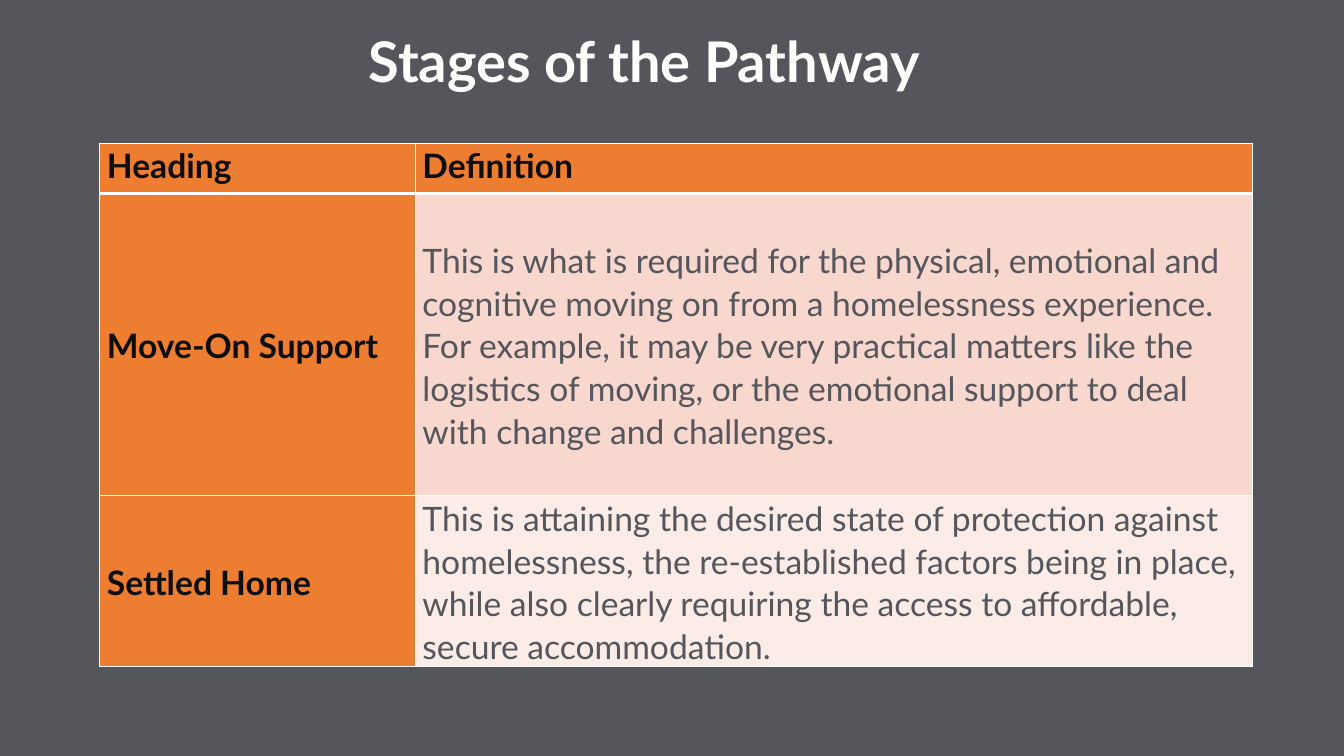
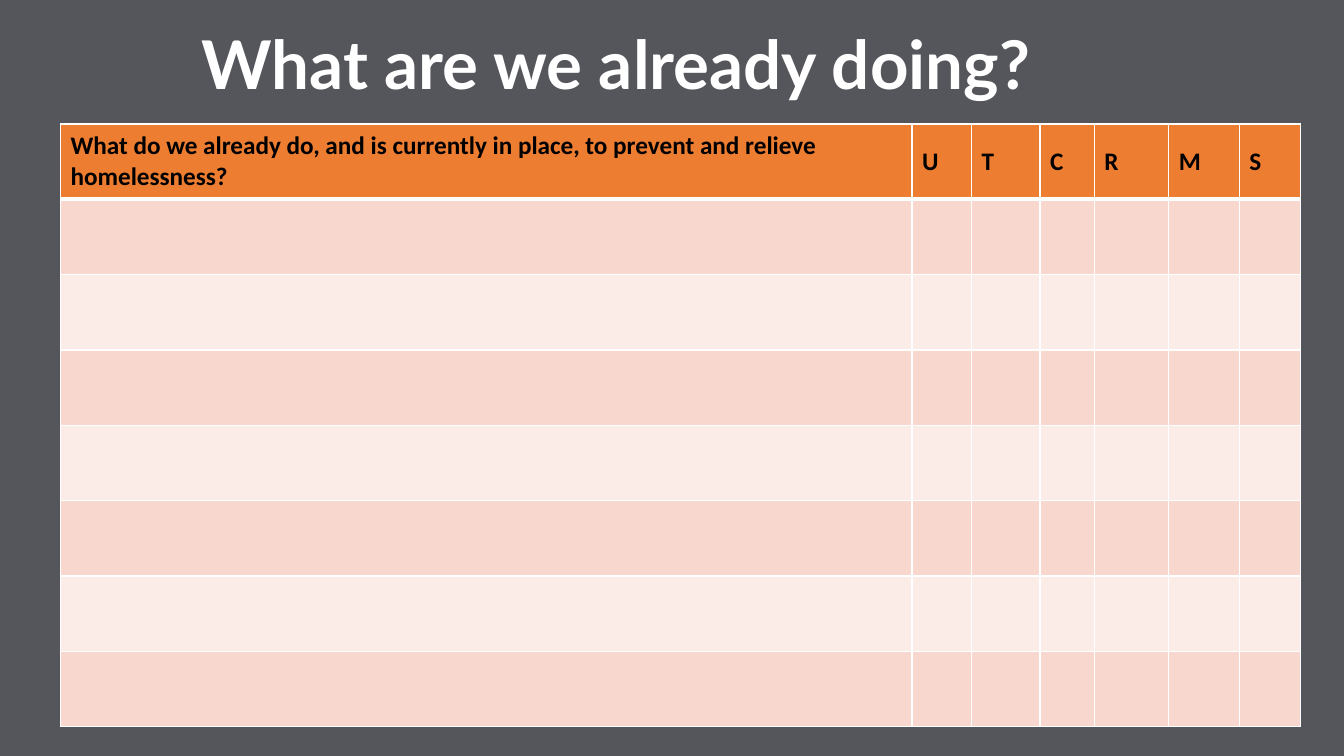
from dataclasses import dataclass

from lxml import etree
from pptx import Presentation
from pptx.dml.color import RGBColor
from pptx.enum.text import MSO_ANCHOR, PP_ALIGN
from pptx.oxml.ns import qn
from pptx.util import Inches, Pt

TOP, MIDDLE, BOTTOM = MSO_ANCHOR.TOP, MSO_ANCHOR.MIDDLE, MSO_ANCHOR.BOTTOM
LEFT, CENTER = PP_ALIGN.LEFT, PP_ALIGN.CENTER
WIDTH, HEIGHT = Inches(13.33), Inches(7.5)
BLANK_LAYOUT = 6


@dataclass(frozen=True)
class Theme:
    slate: str = "54565B"
    white: str = "FFFFFF"
    black: str = "000000"
    ink: str = "0D0D0D"
    orange: str = "ED7D31"
    bands: tuple[str, str] = ("F8D7CE", "FCECE8")
    title_font: str = "Lato"
    plain_font: str = "Calibri"
    large_title: int = 48
    title: int = 40
    body: int = 24
    label: int = 18
    rule: int = 1
    header_rule: int = 3


THEME = Theme()


@dataclass(frozen=True)
class Region:
    """Left, top, width and height as percentages of the slide."""
    left: float
    top: float
    width: float
    height: float

    def lengths(self) -> tuple[int, int, int, int]:
        return (round(WIDTH * self.left / 100), round(HEIGHT * self.top / 100),
                round(WIDTH * self.width / 100), round(HEIGHT * self.height / 100))


@dataclass(frozen=True)
class Title:
    text: str
    region: Region
    size: int
    align: PP_ALIGN


@dataclass(frozen=True)
class Grid:
    region: Region
    columns: tuple[float, ...]
    rows: tuple[float, ...]
    texts: tuple[tuple[str, ...], ...]
    font: str
    size: int
    heading_color: str
    heading_column: bool
    header_anchor: MSO_ANCHOR
    margins: tuple[float, float]
    line_spacing: float


@dataclass(frozen=True)
class Page:
    title: Title
    grid: Grid


PAGES = (
    Page(
        Title("Stages of the Pathway", Region(11.55, 0.93, 72.77, 12.27), THEME.title, CENTER),
        Grid(
            region=Region(7.43, 18.93, 85.75, 66.67),
            columns=(3.13, 8.3),
            rows=(1, 6, 3),
            texts=(
                ("Heading", "Definition"),
                ("Move-On Support",
                 "This is what is required for the physical, emotional and cognitive moving on "
                 "from a homelessness experience. For example, it may be very practical matters "
                 "like the logistics of moving, or the emotional support to deal with change "
                 "and challenges."),
                ("Settled Home",
                 "This is attaining the desired state of protection against homelessness, the "
                 "re-established factors being in place, while also clearly requiring the "
                 "access to affordable, secure accommodation."),
            ),
            font=THEME.title_font, size=THEME.body, heading_color=THEME.ink,
            heading_column=True, header_anchor=TOP, margins=(0.07, 0), line_spacing=1.06,
        ),
    ),
    Page(
        Title("What are we already doing?", Region(14.25, 2.13, 72.77, 12.27),
              THEME.large_title, LEFT),
        Grid(
            region=Region(4.5, 16.4, 92.3, 79.73),
            columns=(8.45, 0.59, 0.68, 0.54, 0.74, 0.7, 0.61),
            rows=(1,) * 8,
            texts=(("What do we already do, and is currently in place, to prevent and relieve "
                    "homelessness?", *"UTCRMS"),),
            font=THEME.plain_font, size=THEME.label, heading_color=THEME.black,
            heading_column=False, header_anchor=MIDDLE, margins=(0.1, 0.05), line_spacing=1.0,
        ),
    ),
)


def apply(target, formats: dict) -> None:
    for name, value in formats.items():
        setattr(target, name, value)


def write(para, text: str, font: str, size: int, color: str, bold: bool) -> None:
    span = para.add_run()
    span.text = text
    apply(span.font, {"name": font, "size": Pt(size), "bold": bold})
    span.font.color.rgb = RGBColor.from_string(color)


def paint(target, color: str) -> None:
    target.fill.solid()
    target.fill.fore_color.rgb = RGBColor.from_string(color)


def draw_borders(cell, header: bool) -> None:
    properties = cell._tc.get_or_add_tcPr()
    widths = {"a:lnL": THEME.rule, "a:lnR": THEME.rule}
    if header:
        widths["a:lnT"] = THEME.rule
    widths["a:lnB"] = THEME.header_rule if header else THEME.rule
    for position, (tag, width) in enumerate(widths.items()):
        line = etree.Element(qn(tag), w=str(Pt(width)))
        fill = etree.SubElement(line, qn("a:solidFill"))
        etree.SubElement(fill, qn("a:srgbClr"), val=THEME.white)
        properties.insert(position, line)


def draw_cell(cell, grid: Grid, row: int, column: int) -> None:
    header = row == 0
    heading = header or (grid.heading_column and column == 0)
    side, edge = map(Inches, grid.margins)
    apply(cell, {"margin_left": side, "margin_right": side,
                 "margin_top": edge, "margin_bottom": edge,
                 "vertical_anchor": grid.header_anchor if header else MIDDLE})
    paint(cell, THEME.orange if heading else THEME.bands[(row - 1) % 2])
    draw_borders(cell, header)
    if row < len(grid.texts):
        para = cell.text_frame.paragraphs[0]
        para.line_spacing = grid.line_spacing
        write(para, grid.texts[row][column], grid.font, grid.size,
              grid.heading_color if heading else THEME.slate, heading)


def draw_grid(slide, grid: Grid) -> None:
    left, top, width, height = grid.region.lengths()
    table = slide.shapes.add_table(len(grid.rows), len(grid.columns),
                                   left, top, width, height).table
    apply(table, {"first_row": True, "first_col": grid.heading_column, "horz_banding": False})
    for column, share in zip(table.columns, grid.columns):
        column.width = round(width * share / sum(grid.columns))
    for row, share in zip(table.rows, grid.rows):
        row.height = round(height * share / sum(grid.rows))
    for row in range(len(grid.rows)):
        for column in range(len(grid.columns)):
            draw_cell(table.cell(row, column), grid, row, column)


def draw_title(slide, title: Title) -> None:
    box = slide.shapes.add_textbox(*title.region.lengths())
    apply(box.text_frame, {"word_wrap": True, "vertical_anchor": BOTTOM})
    para = box.text_frame.paragraphs[0]
    apply(para, {"alignment": title.align, "line_spacing": 0.9})
    write(para, title.text, THEME.title_font, title.size, THEME.white, True)


def main() -> None:
    deck = Presentation()
    apply(deck, {"slide_width": WIDTH, "slide_height": HEIGHT})
    paint(deck.slide_master.background, THEME.slate)
    for page in PAGES:
        slide = deck.slides.add_slide(deck.slide_layouts[BLANK_LAYOUT])
        draw_grid(slide, page.grid)
        draw_title(slide, page.title)
    deck.save("out.pptx")


if __name__ == "__main__":
    main()
